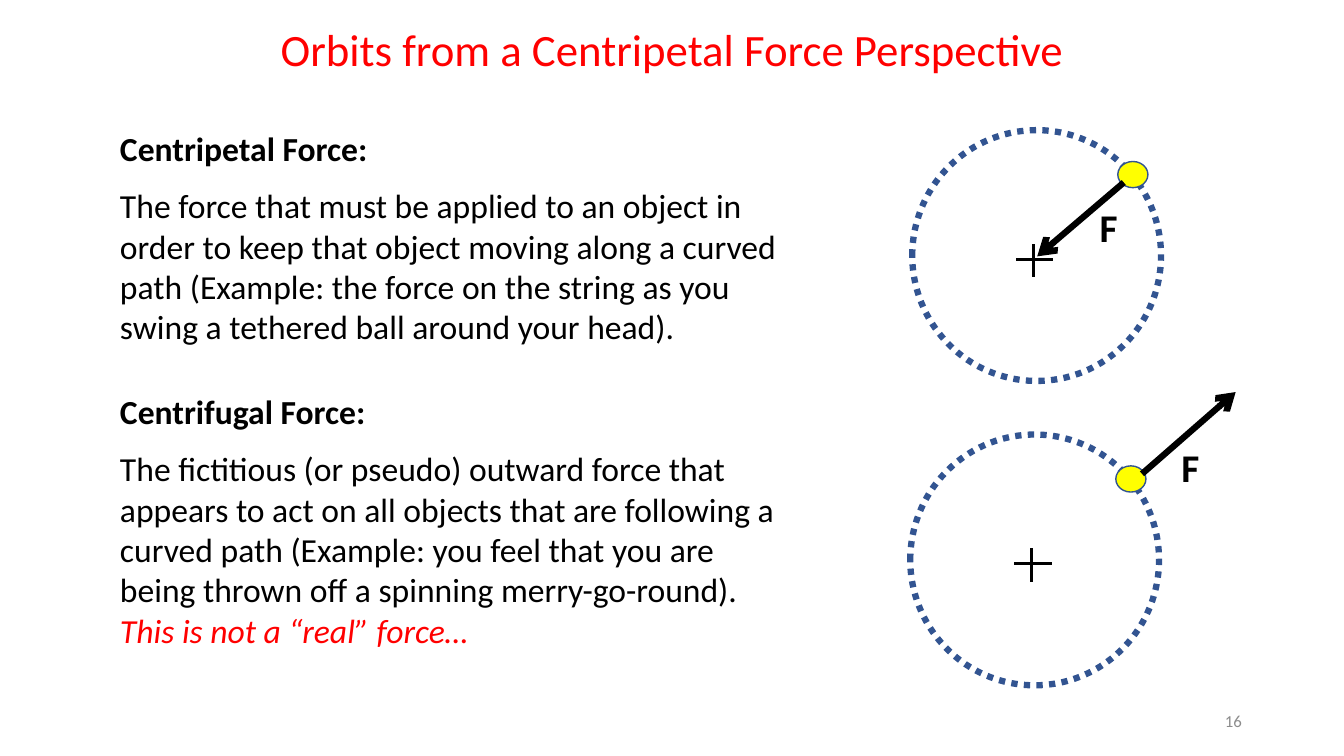
from dataclasses import dataclass

from lxml.etree import SubElement
from pptx import Presentation
from pptx.dml.color import RGBColor
from pptx.enum.dml import MSO_LINE
from pptx.enum.shapes import MSO_CONNECTOR, MSO_SHAPE
from pptx.enum.text import MSO_ANCHOR, MSO_AUTO_SIZE, PP_ALIGN
from pptx.oxml.ns import qn
from pptx.util import Cm, Pt

COLOURS = {"black": "000000", "red": "FF0000", "orbit": "325491",
           "yellow": "FFFF00", "grey": "8C8C8C"}
FONT = "Calibri"
Point = tuple[float, float]


@dataclass
class Definition:
    heading: str
    explanation: str
    remark: str
    frame: tuple[float, float, float, float]


@dataclass
class Orbit:
    """An orbit's corner on the page; the other points are relative to it."""
    corner: Point
    force_start: Point
    force_end: Point
    label: Point


DEFINITIONS = [
    Definition(
        "Centripetal Force:",
        "The force that must be applied to an object in order to keep that object "
        "moving along a curved path (Example: the force on the string as you swing "
        "a tethered ball around your head).",
        "", (2.77, 3.1, 17.83, 5.82)),
    Definition(
        "Centrifugal Force:",
        "The fictitious (or pseudo) outward force that appears to act on all objects "
        "that are following a curved path (Example: you feel that you are being "
        "thrown off a spinning merry-go-round).",
        "This is not a “real” force…", (2.77, 9.73, 17.45, 6.83)),
]
ORBITS = [
    Orbit((22.99, 3.28), (5.33, 1.32), (3.15, 3.18), (4.47, 1.73)),
    Orbit((22.94, 10.95), (5.84, 0.99), (8.2, -1.07), (6.58, 0.1)),
]


def colour(name: str) -> RGBColor:
    return RGBColor.from_string(COLOURS[name])


def place(shape, left: float, top: float, width: float, height: float) -> None:
    shape.left, shape.top = Cm(left), Cm(top)
    shape.width, shape.height = Cm(width), Cm(height)


def format_paragraph(paragraph, size: float, colour_name: str = "black",
                     bold: bool = False, italic: bool = False,
                     align=PP_ALIGN.LEFT, before: float = 0) -> None:
    paragraph.alignment = align
    paragraph.space_before = Pt(before)
    for span in paragraph.runs:
        span.font.name = FONT
        span.font.size = Pt(size)
        span.font.bold = bold
        span.font.italic = italic
        span.font.color.rgb = colour(colour_name)


def remove_bullet(paragraph) -> None:
    properties = paragraph._p.get_or_add_pPr()
    properties.set("marL", "0")
    properties.set("indent", "0")
    SubElement(properties, qn("a:buNone"))


def fill_definition(box, definition: Definition) -> None:
    place(box, *definition.frame)
    frame = box.text_frame
    frame.auto_size = MSO_AUTO_SIZE.NONE
    lines = [definition.heading, definition.explanation, definition.remark]
    frame.text = "\n".join(line for line in lines if line)
    styles = [{"bold": True}, {"before": 12}, {"colour_name": "red", "italic": True}]
    for paragraph, style in zip(frame.paragraphs, styles):
        format_paragraph(paragraph, 24, **style)
        remove_bullet(paragraph)


def add_text(page, text: str, left: float, top: float, width: float,
             height: float, size: float, **style):
    box = page.shapes.add_textbox(Cm(left), Cm(top), Cm(width), Cm(height))
    box.text_frame.word_wrap = True
    box.text_frame.text = text
    format_paragraph(box.text_frame.paragraphs[0], size, **style)
    return box


def add_oval(page, left: float, top: float, width: float, height: float,
             line_width: float):
    oval = page.shapes.add_shape(MSO_SHAPE.OVAL, Cm(left), Cm(top), Cm(width), Cm(height))
    oval.shadow.inherit = False
    oval.fill.background()
    oval.line.color.rgb = colour("orbit")
    oval.line.width = Pt(line_width)
    return oval


def add_line(page, start: Point, end: Point, width: float, arrow: bool = False) -> None:
    line = page.shapes.add_connector(
        MSO_CONNECTOR.STRAIGHT, *(Cm(value) for value in (*start, *end)))
    line.line.color.rgb = colour("black")
    line.line.width = Pt(width)
    if arrow:
        SubElement(line.line._get_or_add_ln(), qn("a:tailEnd"), type="arrow")
    SubElement(line._element.spPr, qn("a:effectLst"))


def draw_orbit(page, orbit: Orbit) -> None:
    def at(point: Point) -> Point:
        return orbit.corner[0] + point[0], orbit.corner[1] + point[1]

    ring = add_oval(page, *orbit.corner, 6.27, 6.32, 4.5)
    ring.line.dash_style = MSO_LINE.ROUND_DOT
    planet = add_oval(page, *at((5.18, 0.79)), 0.76, 0.66, 1)
    planet.fill.solid()
    planet.fill.fore_color.rgb = colour("yellow")
    add_line(page, at(orbit.force_start), at(orbit.force_end), 4.5, arrow=True)
    add_line(page, at((3.05, 2.87)), at((3.05, 3.71)), 2.25)
    add_line(page, at((2.62, 3.25)), at((3.56, 3.25)), 2.25)
    add_text(page, "F", *at(orbit.label), 1.32, 1.45, 28, bold=True)


def main() -> None:
    deck = Presentation()
    deck.slide_width, deck.slide_height = Cm(33.87), Cm(19.05)
    page = deck.slides.add_slide(deck.slide_layouts.get_by_name("Two Content"))

    title = page.shapes.title
    place(title, 5.51, 0.41, 22.86, 1.63)
    title.text_frame.auto_size = MSO_AUTO_SIZE.NONE
    title.text_frame.text = "Orbits from a Centripetal Force Perspective"
    format_paragraph(title.text_frame.paragraphs[0], 32, "red", align=PP_ALIGN.CENTER)

    for index, definition in enumerate(DEFINITIONS, start=1):
        fill_definition(page.placeholders[index], definition)
    for orbit in ORBITS:
        draw_orbit(page, orbit)

    number = add_text(page, "16", 23.93, 17.65, 7.62, 1.02, 12,
                      colour_name="grey", align=PP_ALIGN.RIGHT)
    number.text_frame.vertical_anchor = MSO_ANCHOR.MIDDLE
    deck.save("out.pptx")


if __name__ == "__main__":
    main()
